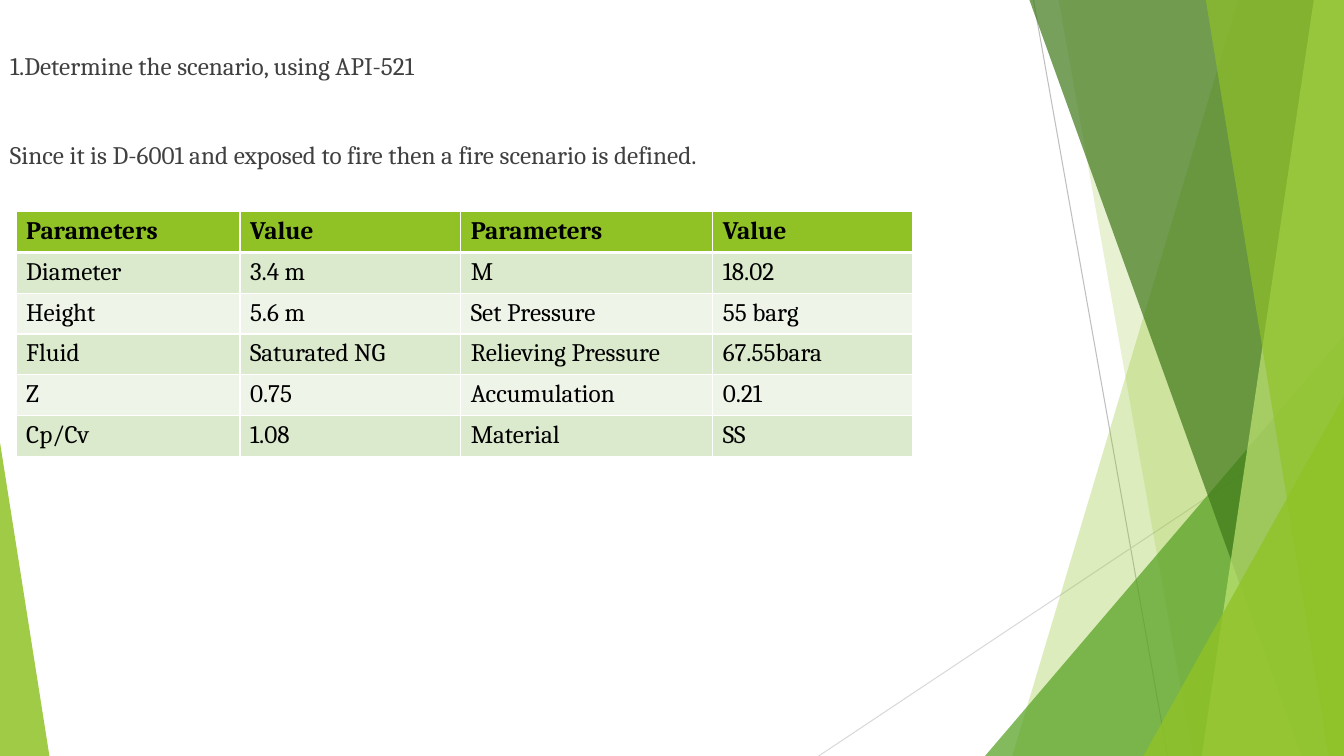
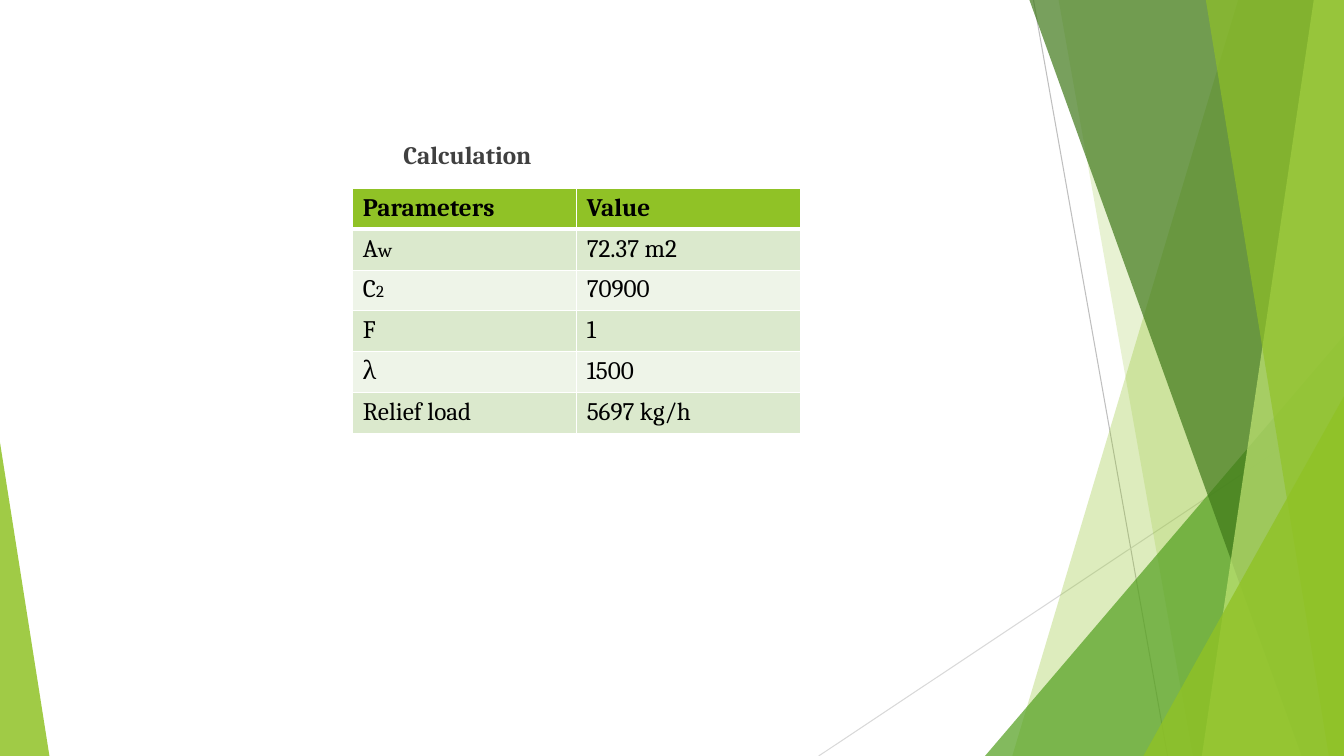
from dataclasses import dataclass
from typing import Union

from lxml import etree
from pptx import Presentation
from pptx import util as u
from pptx.dml.color import RGBColor
from pptx.enum import shapes, text
from pptx.oxml.ns import qn

PX = 9144  # EMU per px, 100 px to the inch
WIDTH, HEIGHT = 1333, 750
FONT = "Cambria"
BODY_SIZE = 18

WHITE = RGBColor(0xFF, 0xFF, 0xFF)
BLACK = RGBColor(0x00, 0x00, 0x00)
DARK_GREY = RGBColor(0x40, 0x40, 0x40)
MID_GREY = RGBColor(0xBF, 0xBF, 0xBF)
LIGHT_GREY = RGBColor(0xD9, 0xD9, 0xD9)
LIME = RGBColor(0x90, 0xC2, 0x26)
PALE_LIME = RGBColor(0xC0, 0xE4, 0x74)
GREEN = RGBColor(0x54, 0xA0, 0x21)
DEEP_GREEN = RGBColor(0x3F, 0x78, 0x19)
ROW_FILLS = (RGBColor(0xDB, 0xE9, 0xCD), RGBColor(0xEE, 0xF4, 0xE8))


@dataclass(frozen=True)
class Ray:
    """A thin line behind the facets."""
    x1: int
    y1: int
    x2: int
    y2: int
    color: RGBColor


@dataclass(frozen=True)
class Band:
    """A full-height facet between a slanted left edge and the right edge."""
    top_x: int
    bottom_x: int
    color: RGBColor
    opacity: int


@dataclass(frozen=True)
class Wedge:
    """A triangle standing on the bottom edge; apex runs from 0 (left) to 1 (right)."""
    left: int
    top: int
    width: int
    apex: int
    color: RGBColor
    opacity: int


@dataclass(frozen=True)
class Symbol:
    """A letter followed by a smaller index."""
    letter: str
    index: str
    index_size: int


Cell = Union[str, Symbol]

RAYS = [
    Ray(1025, 0, 1158, HEIGHT, MID_GREY),
    Ray(WIDTH, 403, 812, HEIGHT, LIGHT_GREY),
]
FACETS = [
    Band(1228, 1004, LIME, 30),
    Band(1050, 1183, LIME, 20),
    Wedge(977, 333, 356, 1, GREEN, 72),
    Band(1021, 1291, DEEP_GREEN, 70),
    Band(1303, 1192, PALE_LIME, 70),
    Band(1196, 1318, LIME, 65),
    Wedge(1134, 393, 199, 1, LIME, 80),
    Wedge(0, 439, 49, 0, LIME, 85),
]

VESSEL_ROWS: list[list[Cell]] = [
    ["Parameters", "Value", "Parameters", "Value"],
    ["Diameter", "3.4 m", "M", "18.02"],
    ["Height", "5.6 m", "Set Pressure", "55 barg"],
    ["Fluid", "Saturated NG", "Relieving Pressure", "67.55bara"],
    ["Z", "0.75", "Accumulation", "0.21"],
    ["Cp/Cv", "1.08", "Material", "SS"],
]
RELIEF_ROWS: list[list[Cell]] = [
    ["Parameters", "Value"],
    [Symbol("A", "w", 14), "72.37 m2"],
    [Symbol("C", "2", 12), "70900"],
    ["F", "1"],
    ["λ", "1500"],
    ["Relief load", "5697 kg/h"],
]


def px(*lengths: int) -> list[u.Emu]:
    return [u.Emu(n * PX) for n in lengths]


def format_run(r, color: RGBColor, bold: bool = False, size: int = BODY_SIZE) -> None:
    r.font.name, r.font.size, r.font.bold = FONT, u.Pt(size), bold
    r.font.color.rgb = color


# Shared background
def add_ray(s, ray: Ray) -> None:
    line = s.shapes.add_connector(
        shapes.MSO_CONNECTOR.STRAIGHT, *px(ray.x1, ray.y1, ray.x2, ray.y2))
    line.line.color.rgb = ray.color
    line.line.width = u.Pt(0.75)
    etree.SubElement(line.element.spPr, qn("a:effectLst"))


def add_facet(s, facet: Union[Band, Wedge]) -> None:
    if isinstance(facet, Band):
        outline = s.shapes.build_freeform(facet.top_x, 0, scale=PX)
        outline.add_line_segments(
            [(WIDTH, 0), (WIDTH, HEIGHT), (facet.bottom_x, HEIGHT)], close=True)
        sp = outline.convert_to_shape()
    else:
        sp = s.shapes.add_shape(
            shapes.MSO_SHAPE.ISOSCELES_TRIANGLE,
            *px(facet.left, facet.top, facet.width, HEIGHT - facet.top))
        sp.adjustments[0] = facet.apex
    sp.shadow.inherit = False
    sp.line.fill.background()
    sp.fill.solid()
    sp.fill.fore_color.rgb = facet.color
    color = sp.element.spPr.find(qn("a:solidFill")).find(qn("a:srgbClr"))
    etree.SubElement(color, qn("a:alpha"), val=str(facet.opacity * 1000))


def add_background(s, layout) -> None:
    """Draw the background on s, then hand it over to the layout."""
    for ray in RAYS:
        add_ray(s, ray)
    for facet in FACETS:
        add_facet(s, facet)
    for sp in list(s.shapes):
        if not sp.is_placeholder:
            layout.shapes.element.append(sp.element)


# Text lines
def set_line(sp, content: str, left: int, middle: int, bold: bool = False) -> None:
    """Place one line of text, centred vertically on middle."""
    sp.left, sp.top, sp.width, sp.height = px(left, middle - 20, 900, 40)
    tf = sp.text_frame
    tf.text = content
    tf.word_wrap = True
    tf.auto_size = text.MSO_AUTO_SIZE.NONE
    tf.vertical_anchor = text.MSO_ANCHOR.MIDDLE
    p = tf.paragraphs[0]
    p.alignment = text.PP_ALIGN.LEFT
    format_run(p.runs[0], DARK_GREY, bold)


# Tables
def set_borders(cell, top: int, bottom: int) -> None:
    tc_pr = cell._tc.get_or_add_tcPr()
    for side, width in (("L", 1), ("R", 1), ("T", top), ("B", bottom)):
        ln = etree.SubElement(tc_pr, qn(f"a:ln{side}"), w=str(u.Pt(width)))
        fill = etree.SubElement(ln, qn("a:solidFill"))
        etree.SubElement(fill, qn("a:srgbClr"), val=str(WHITE))


def set_cell(cell, value: Cell, row: int) -> None:
    header = row == 0
    set_borders(cell, top=3 if row == 1 else 1, bottom=3 if header else 1)
    cell.fill.solid()
    cell.fill.fore_color.rgb = LIME if header else ROW_FILLS[(row - 1) % 2]
    p = cell.text_frame.paragraphs[0]
    p.text = value.letter if isinstance(value, Symbol) else value
    format_run(p.runs[0], BLACK, header)
    if isinstance(value, Symbol):
        r = p.add_run()
        r.text = value.index
        format_run(r, BLACK, size=value.index_size)


def add_parameter_table(s, rows: list[list[Cell]], left: int, top: int,
                        widths: list[int]) -> None:
    table = s.shapes.add_table(
        len(rows), len(widths), *px(left, top, sum(widths), 243)).table
    for column, width in zip(table.columns, px(*widths)):
        column.width = width
    for i, row in enumerate(rows):
        for j, value in enumerate(row):
            set_cell(table.cell(i, j), value, i)


# Slides
def add_scenario_slide(s) -> None:
    set_line(s.shapes.title, "1.Determine the scenario, using API-521", 0, 65)
    set_line(s.shapes.add_textbox(*px(0, 0, 0, 0)),
             "Since it is D-6001 and exposed to fire then a fire scenario is defined.",
             0, 153)
    add_parameter_table(s, VESSEL_ROWS, 16, 210, [222, 219, 250, 198])


def add_calculation_slide(s) -> None:
    set_line(s.shapes.title, "Calculation", 390, 153, bold=True)
    add_parameter_table(s, RELIEF_ROWS, 350, 187, [222, 222])


def main() -> None:
    prs = Presentation()
    prs.slide_width, prs.slide_height = px(WIDTH, HEIGHT)
    layout = prs.slide_layouts[5]  # title only
    for footer in list(layout.placeholders)[1:]:
        layout.shapes.element.remove(footer.element)
    scenario, calculation = (prs.slides.add_slide(layout) for _ in range(2))
    add_background(scenario, layout)
    add_scenario_slide(scenario)
    add_calculation_slide(calculation)
    prs.save("out.pptx")


if __name__ == "__main__":
    main()
